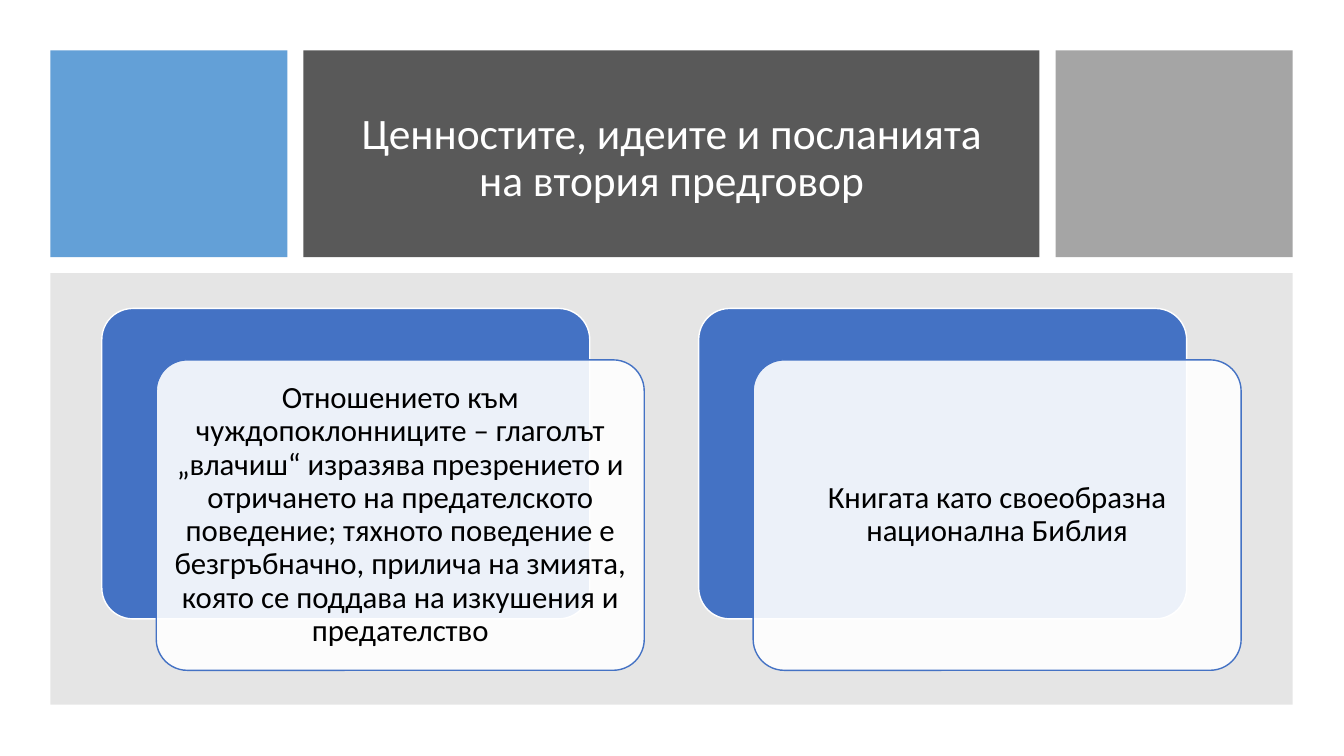
from pptx import Presentation
from pptx.dml.color import RGBColor
from pptx.enum import shapes, text
from pptx.oxml import xmlchemy
from pptx.util import Inches, Pt

COLORS = {
    "sky": "5B9BD5",
    "dark": "595959",
    "gray": "A5A5A5",
    "panel": "808080",
    "blue": "4472C4",
    "white": "FFFFFF",
    "black": "000000",
}
TITLE = "Ценностите, идеите и посланията на втория предговор"
CARDS = [
    "Отношението към чуждопоклонниците – глаголът „влачиш“ изразява "
    "презрението и отричането на предателското поведение; тяхното поведение "
    "е безгръбначно, прилича на змията, която се поддава на изкушения и "
    "предателство",
    "Книгата като своеобразна национална Библия",
]


def rgb(name):
    return RGBColor.from_string(COLORS[name])


def add_box(slide, kind, box, fill, alpha=100, line=None):
    shape = slide.shapes.add_shape(kind, *map(Inches, box))
    shape.shadow.inherit = False
    shape.fill.solid()
    shape.fill.fore_color.rgb = rgb(fill)
    if alpha < 100:
        color = shape.fill._xPr.solidFill[0]
        node = xmlchemy.OxmlElement("a:alpha")
        node.set("val", str(alpha * 1000))
        color.append(node)
    if line:
        shape.line.color.rgb = rgb(line)
        shape.line.width = Pt(1)
    else:
        shape.line.fill.background()
    return shape


def add_block(slide, box, color, alpha=100):
    add_box(slide, shapes.MSO_SHAPE.RECTANGLE, box, color, alpha)


def add_plate(slide, box, fill, line, alpha=100):
    plate = add_box(slide, shapes.MSO_SHAPE.ROUNDED_RECTANGLE,
                    box, fill, alpha, line)
    plate.adjustments[0] = 0.1


def add_label(slide, box, words, size, color, inset):
    frame = slide.shapes.add_textbox(*map(Inches, box)).text_frame
    frame.word_wrap = True
    frame.vertical_anchor = text.MSO_ANCHOR.MIDDLE
    frame.margin_left = frame.margin_right = Inches(inset)
    frame.margin_top = frame.margin_bottom = Inches(inset)
    para = frame.paragraphs[0]
    para.text = words
    para.alignment = text.PP_ALIGN.CENTER
    para.line_spacing = 0.9
    para.font.name = "Calibri"
    para.font.size = Pt(size)
    para.font.color.rgb = rgb(color)


def add_card(slide, left, words):
    top, width, height = 3.06, 4.84, 3.08
    add_plate(slide, (left, top, width, height), "blue", "white")
    left, top = left + 0.54, top + 0.51
    add_plate(slide, (left, top, width, height), "white", "blue", 90)
    pad = 0.09
    inner = (left + pad, top + pad, width - 2 * pad, height - 2 * pad)
    add_label(slide, inner, words, 22, "black", 0.08)


def main():
    deck = Presentation()
    deck.slide_width = Inches(13.33)
    deck.slide_height = Inches(7.5)
    slide = deck.slides.add_slide(deck.slide_layouts[6])

    add_block(slide, (0.5, 0.5, 2.35, 2.05), "sky", 95)
    add_block(slide, (3.01, 0.5, 7.3, 2.05), "dark")
    add_label(slide, (3.33, 0.8, 6.66, 1.56), TITLE, 31, "white", 0.1)
    add_block(slide, (10.47, 0.5, 2.35, 2.05), "gray")
    add_block(slide, (0.5, 2.71, 12.32, 4.28), "panel", 20)
    for index, words in enumerate(CARDS):
        add_card(slide, 1.01 + index * 5.92, words)

    deck.save("out.pptx")


if __name__ == "__main__":
    main()
